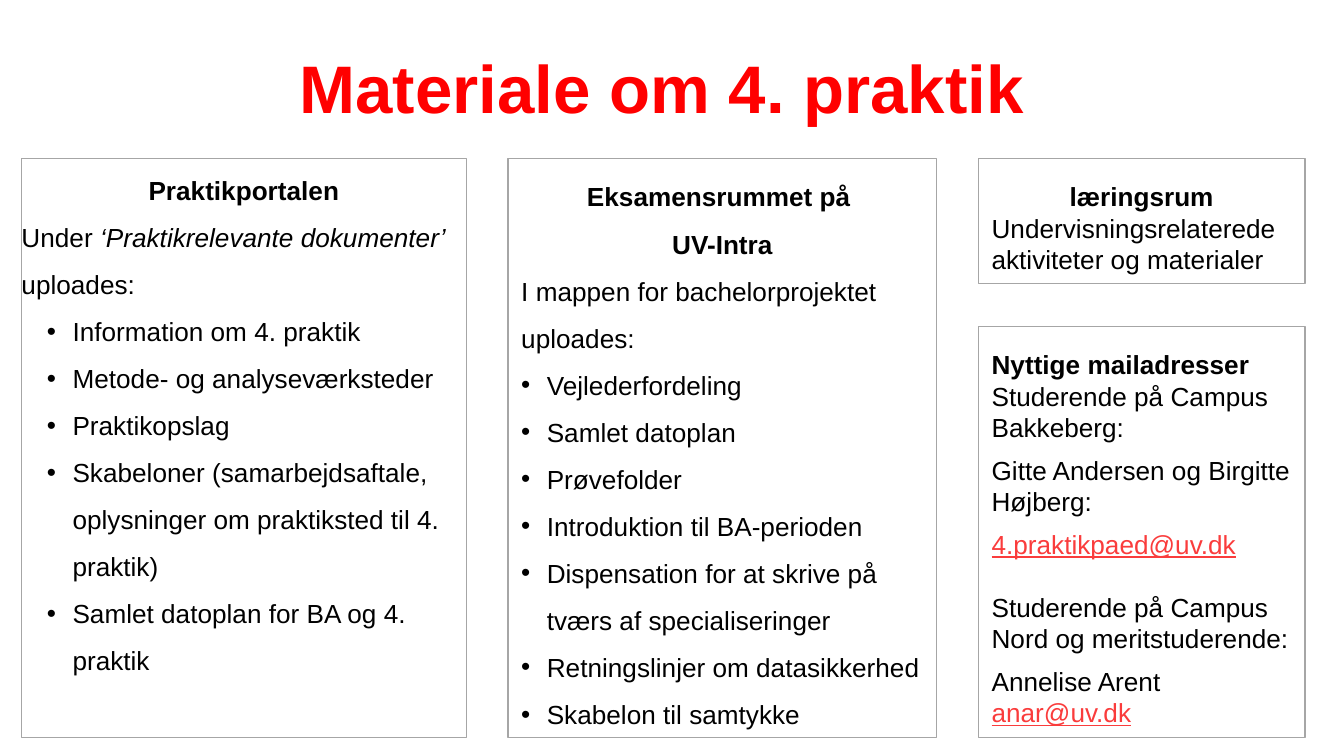
from dataclasses import dataclass

from lxml.etree import SubElement
from pptx import Presentation
from pptx.dml.color import RGBColor
from pptx.enum.shapes import MSO_SHAPE
from pptx.enum.text import MSO_ANCHOR, MSO_AUTO_SIZE, PP_ALIGN
from pptx.oxml.ns import qn
from pptx.slide import Slide
from pptx.text.text import TextFrame, _Paragraph
from pptx.util import Emu, Pt

EMU_PER_PX = 4572  # 200 px to the inch


@dataclass(frozen=True)
class Theme:
    font: str = "Arial"
    title_size: int = 36
    body_size: int = 14
    title: RGBColor = RGBColor(0xFF, 0x00, 0x00)
    text: RGBColor = RGBColor(0x00, 0x00, 0x00)
    link: RGBColor = RGBColor(0xFA, 0x3C, 0x3C)
    border: RGBColor = RGBColor(0xA6, 0xA6, 0xA6)


THEME = Theme()


@dataclass(frozen=True)
class Span:
    text: str
    bold: bool = False
    italic: bool = False
    link: bool = False


@dataclass(frozen=True)
class Line:
    """One paragraph; a newline inside a span is a line break."""
    spans: tuple[Span, ...]
    centered: bool = False
    spacing: float = 1.0
    before: int = 0
    after: int = 0
    bullet_indent: int | None = None


@dataclass(frozen=True)
class Panel:
    left: int
    top: int
    width: int
    height: int
    lines: tuple[Line, ...]
    inset_x: int = 20
    inset_y: int = 10


def px(length: int) -> Emu:
    return Emu(length * EMU_PER_PX)


def heading(text: str, centered: bool = True) -> Line:
    return Line((Span(text, bold=True),), centered, 1.5)


def plain(text: str, spacing: float = 1.0, before: int = 0, after: int = 0) -> Line:
    return Line((Span(text),), spacing=spacing, before=before, after=after)


def mail(address: str) -> Line:
    return Line((Span(address, link=True),))


def bullets(indent: int, *items: str) -> tuple[Line, ...]:
    return tuple(Line((Span(item),), spacing=1.5, bullet_indent=indent) for item in items)


BULLET_HANG = 38
COLUMN_TOP, COLUMN_HEIGHT = 236, 862
SIDE_LEFT, SIDE_WIDTH = 1456, 486

PANELS = (
    Panel(32, COLUMN_TOP, 662, COLUMN_HEIGHT, (
        heading("Praktikportalen"),
        Line((Span("Under "), Span("‘Praktikrelevante dokumenter’", italic=True),
              Span(" uploades:")), spacing=1.5),
        *bullets(
            2 * BULLET_HANG,
            "Information om 4. praktik",
            "Metode- og analyseværksteder",
            "Praktikopslag",
            "Skabeloner (samarbejdsaftale, oplysninger om praktiksted til 4. praktik)",
            "Samlet datoplan for BA og 4. praktik",
        ),
    ), inset_x=0, inset_y=0),
    Panel(756, COLUMN_TOP, 638, COLUMN_HEIGHT, (
        heading("Eksamensrummet på \nUV-Intra"),
        plain("I mappen for bachelorprojektet uploades:", spacing=1.5),
        *bullets(
            BULLET_HANG,
            "Vejlederfordeling",
            "Samlet datoplan",
            "Prøvefolder",
            "Introduktion til BA-perioden",
            "Dispensation for at skrive på tværs af specialiseringer",
            "Retningslinjer om datasikkerhed",
            "Skabelon til samtykke",
        ),
    )),
    Panel(SIDE_LEFT, 486, SIDE_WIDTH, 612, (
        heading("Nyttige mailadresser", centered=False),
        plain("Studerende på Campus Bakkeberg:", after=6),
        plain("Gitte Andersen og Birgitte Højberg:", after=6),
        mail("4.praktikpaed@uv.dk"),
        plain("Studerende på Campus Nord og meritstuderende:", before=17, after=6),
        plain("Annelise Arent"),
        mail("anar@uv.dk"),
    )),
    Panel(SIDE_LEFT, COLUMN_TOP, SIDE_WIDTH, 186, (
        heading("læringsrum"),
        plain("Undervisningsrelaterede aktiviteter og materialer", after=6),
    )),
)


def add_bullet(paragraph: _Paragraph, indent: int) -> None:
    """Give the paragraph a hanging bullet whose text starts at indent."""
    properties = paragraph._p.get_or_add_pPr()
    properties.set("marL", str(px(indent)))
    properties.set("indent", str(px(-BULLET_HANG)))
    color = SubElement(properties, qn("a:buClr"))
    SubElement(color, qn("a:srgbClr"), val=str(THEME.text))
    SubElement(properties, qn("a:buFont"), typeface=THEME.font)
    SubElement(properties, qn("a:buChar"), char="•")


def write_span(paragraph: _Paragraph, span: Span) -> None:
    for index, row in enumerate(span.text.split("\n")):
        if index:
            paragraph.add_line_break()
        run = paragraph.add_run()
        run.text = row
        font = run.font
        font.name, font.size = THEME.font, Pt(THEME.body_size)
        font.bold, font.italic, font.underline = span.bold, span.italic, span.link
        font.color.rgb = THEME.link if span.link else THEME.text


def write_line(paragraph: _Paragraph, line: Line) -> None:
    paragraph.alignment = PP_ALIGN.CENTER if line.centered else PP_ALIGN.LEFT
    paragraph.line_spacing = line.spacing
    paragraph.space_before = Pt(line.before)
    paragraph.space_after = Pt(line.after)
    if line.bullet_indent is not None:
        add_bullet(paragraph, line.bullet_indent)
    for span in line.spans:
        write_span(paragraph, span)


def set_frame(frame: TextFrame, inset_x: int, inset_y: int) -> None:
    frame.word_wrap = True
    frame.auto_size = MSO_AUTO_SIZE.NONE
    frame.vertical_anchor = MSO_ANCHOR.TOP
    frame.margin_left = frame.margin_right = px(inset_x)
    frame.margin_top = frame.margin_bottom = px(inset_y)


def draw_title(slide: Slide, text: str) -> None:
    title = slide.shapes.title
    title.left, title.top, title.width, title.height = map(px, (166, 82, 1638, 126))
    set_frame(title.text_frame, 0, 0)
    paragraph = title.text_frame.paragraphs[0]
    paragraph.alignment = PP_ALIGN.CENTER
    paragraph.line_spacing = 0.9
    run = paragraph.add_run()
    run.text = text
    run.font.name, run.font.size = THEME.font, Pt(THEME.title_size)
    run.font.bold = True
    run.font.color.rgb = THEME.title


def draw_panel(slide: Slide, panel: Panel) -> None:
    box = slide.shapes.add_shape(
        MSO_SHAPE.RECTANGLE, *map(px, (panel.left, panel.top, panel.width, panel.height)))
    box.shadow.inherit = False
    box.fill.background()
    box.line.color.rgb = THEME.border
    box.line.width = Pt(0.75)
    frame = box.text_frame
    set_frame(frame, panel.inset_x, panel.inset_y)
    for index, line in enumerate(panel.lines):
        write_line(frame.add_paragraph() if index else frame.paragraphs[0], line)


def main() -> None:
    deck = Presentation()
    deck.slide_width, deck.slide_height = px(2000), px(1125)
    slide = deck.slides.add_slide(deck.slide_layouts.get_by_name("Title Only"))
    draw_title(slide, "Materiale om 4. praktik")
    for panel in PANELS:
        draw_panel(slide, panel)
    deck.save("out.pptx")


if __name__ == "__main__":
    main()
